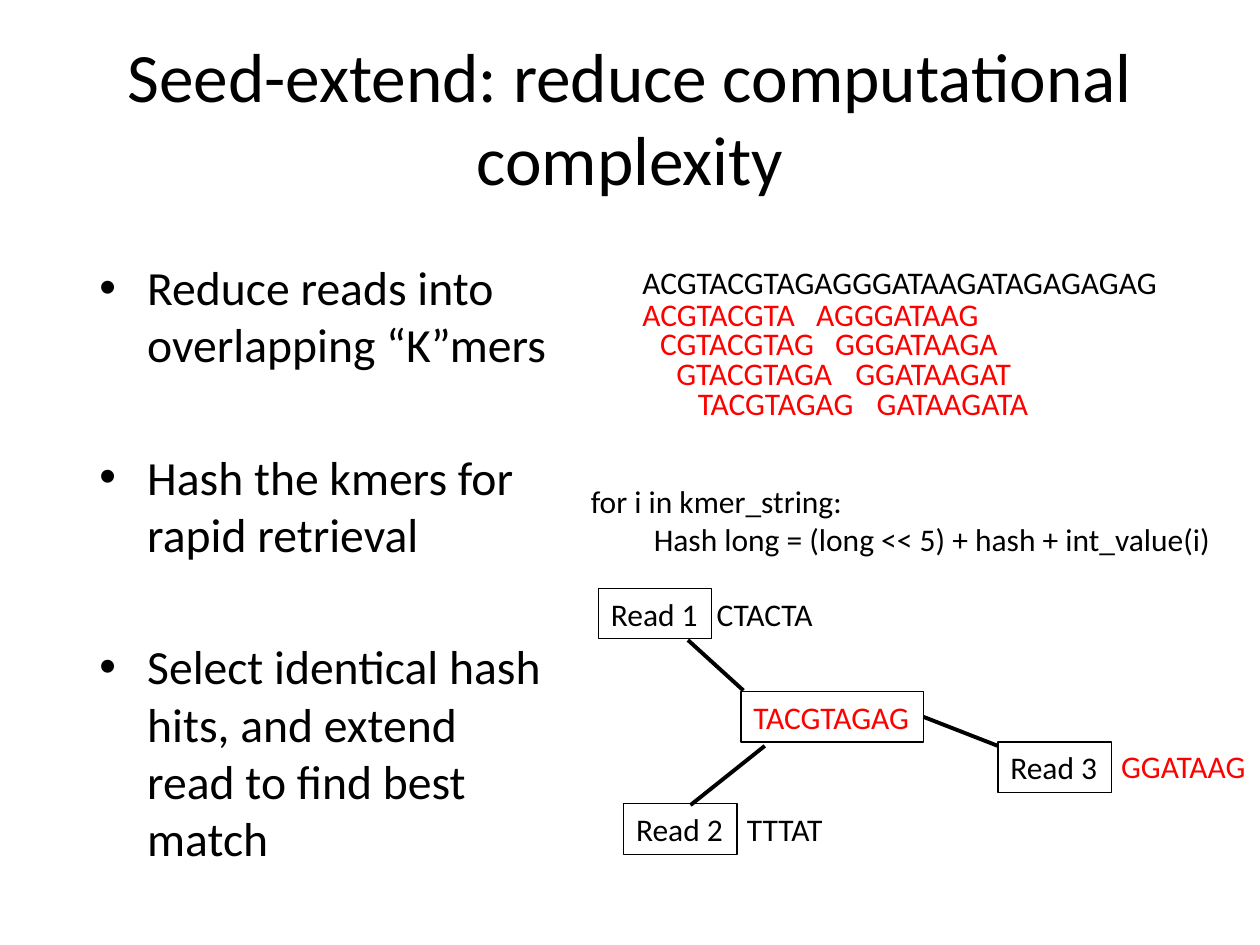
import dataclasses
import typing

import lxml.etree
import pptx
import pptx.dml.color
import pptx.enum.shapes
import pptx.enum.text
import pptx.oxml.ns
import pptx.util

Inches = pptx.util.Inches
Pt = pptx.util.Pt
qn = pptx.oxml.ns.qn
ALIGN = pptx.enum.text.PP_ALIGN
ANCHOR = pptx.enum.text.MSO_ANCHOR

BLACK, RED = "000000", "FF0000"
ROW = 0.4
SEQ = "ACGTACGTAGAGGGATAAGATAGAGAGAG"
K = 9


@dataclasses.dataclass
class Label:
    text: str
    left: float
    top: float
    width: float
    color: str = BLACK


@dataclasses.dataclass
class Edge:
    start: tuple[float, float]
    end: tuple[float, float]


POINTS = [
    "Reduce reads into overlapping “K”mers",
    "Hash the kmers for rapid retrieval",
    "Select identical hash hits, and extend read to find best match",
]
TOPS = [2.29, 2.52, 2.76, 3.0]
# Index of the first kmer in the sequence, left edges, widths
RUNS = [
    (0, [5.0, 5.14, 5.27, 5.44], [1.42, 1.44, 1.45, 1.45]),
    (10, [6.38, 6.53, 6.69, 6.86], [1.5, 1.5, 1.45, 1.41]),
]
READS = [
    Label("Read 1", 4.75, 4.67, 0.9),
    Label("Read 2", 4.95, 6.38, 0.9),
    Label("Read 3", 7.92, 5.89, 0.9),
]
TAILS = [
    Label("CTACTA", 5.59, 4.67, 0.97),
    Label("TTTAT", 5.83, 6.38, 0.81),
    Label("GGATAAG", 8.8, 5.88, 1.2, RED),
]
SEED = Label("TACGTAGAG", 5.88, 5.49, 1.45, RED)
EDGES = [
    Edge((5.9, 5.48), (5.46, 5.08)),
    Edge((6.07, 5.92), (5.48, 6.39)),
]
HIT = Edge((7.33, 5.69), (7.92, 5.92))


def rgb(code: str) -> pptx.dml.color.RGBColor:
    return pptx.dml.color.RGBColor.from_string(code)


def write(shape, *lines: str, size: float = 18, color: str = BLACK,
          align=ALIGN.LEFT, anchor=ANCHOR.TOP, wrap: bool = False,
          gap: float = 0) -> list:
    """Fill a shape with one paragraph per line; gap is the space between."""
    frame = shape.text_frame
    frame.word_wrap = wrap
    frame.vertical_anchor = anchor
    paras = []
    for i, line in enumerate(lines):
        para = frame.paragraphs[0] if i == 0 else frame.add_paragraph()
        para.alignment = align
        para.space_before = Pt(gap if i else 0)
        run = para.add_run()
        run.text = line
        run.font.name = "Calibri"
        run.font.size = Pt(size)
        run.font.color.rgb = rgb(color)
        paras.append(para)
    return paras


def indent(para, left: float, first: float = 0) -> None:
    props = para._p.get_or_add_pPr()
    props.set("marL", str(Inches(left)))
    props.set("indent", str(Inches(first)))


def bullet(para) -> None:
    indent(para, 0.38, -0.38)
    props = para._p.get_or_add_pPr()
    lxml.etree.SubElement(props, qn("a:buFont"), typeface="Arial")
    lxml.etree.SubElement(props, qn("a:buChar"), char="•")


def add_text(slide, left: float, top: float, width: float, height: float,
             *lines: str, **style: typing.Any) -> list:
    box = slide.shapes.add_textbox(
        Inches(left), Inches(top), Inches(width), Inches(height))
    return write(box, *lines, **style)


def add_label(slide, item: Label) -> None:
    add_text(slide, item.left, item.top, item.width, ROW, item.text,
             color=item.color)


def add_box(slide, item: Label):
    box = slide.shapes.add_shape(
        pptx.enum.shapes.MSO_SHAPE.RECTANGLE, Inches(item.left),
        Inches(item.top), Inches(item.width), Inches(ROW))
    box.shadow.inherit = False
    box.fill.background()
    box.line.color.rgb = rgb(BLACK)
    box.line.width = Pt(0.75)
    write(box, item.text, color=item.color)
    return box


def add_edge(slide, edge: Edge):
    ends = [Inches(v) for v in (*edge.start, *edge.end)]
    line = slide.shapes.add_connector(
        pptx.enum.shapes.MSO_CONNECTOR.STRAIGHT, *ends)
    line.line.color.rgb = rgb(BLACK)
    line.line.width = Pt(2.25)
    lxml.etree.SubElement(line._element.spPr, qn("a:effectLst"))
    return line


def main() -> None:
    deck = pptx.Presentation()
    deck.slide_width, deck.slide_height = Inches(10), Inches(7.5)
    slide = deck.slides.add_slide(deck.slide_layouts[6])

    add_text(slide, 0.5, 0.3, 9, 1.25,
             "Seed-extend: reduce computational complexity", size=39.6,
             align=ALIGN.CENTER, anchor=ANCHOR.MIDDLE, wrap=True)
    for para in add_text(slide, 0.69, 2, 3.81, 4.76, *POINTS, size=27.2,
                         wrap=True, gap=43):
        bullet(para)

    add_label(slide, Label(SEQ, 5, 2.04, 4.32))
    for first, lefts, widths in RUNS:
        for i, (left, top, width) in enumerate(zip(lefts, TOPS, widths), first):
            add_label(slide, Label(SEQ[i:i + K], left, top, width, RED))

    code = add_text(slide, 4.59, 3.78, 5.18, 0.71, "for i in kmer_string:",
                    "Hash long = (long << 5) + hash + int_value(i)")
    indent(code[1], 0.5)

    seed = add_box(slide, SEED)
    for edge in EDGES:
        add_edge(slide, edge)
    add_edge(slide, HIT).begin_connect(seed, 3)
    for read in READS:
        add_box(slide, read)
    for tail in TAILS:
        add_label(slide, tail)
    deck.save("out.pptx")


if __name__ == "__main__":
    main()
